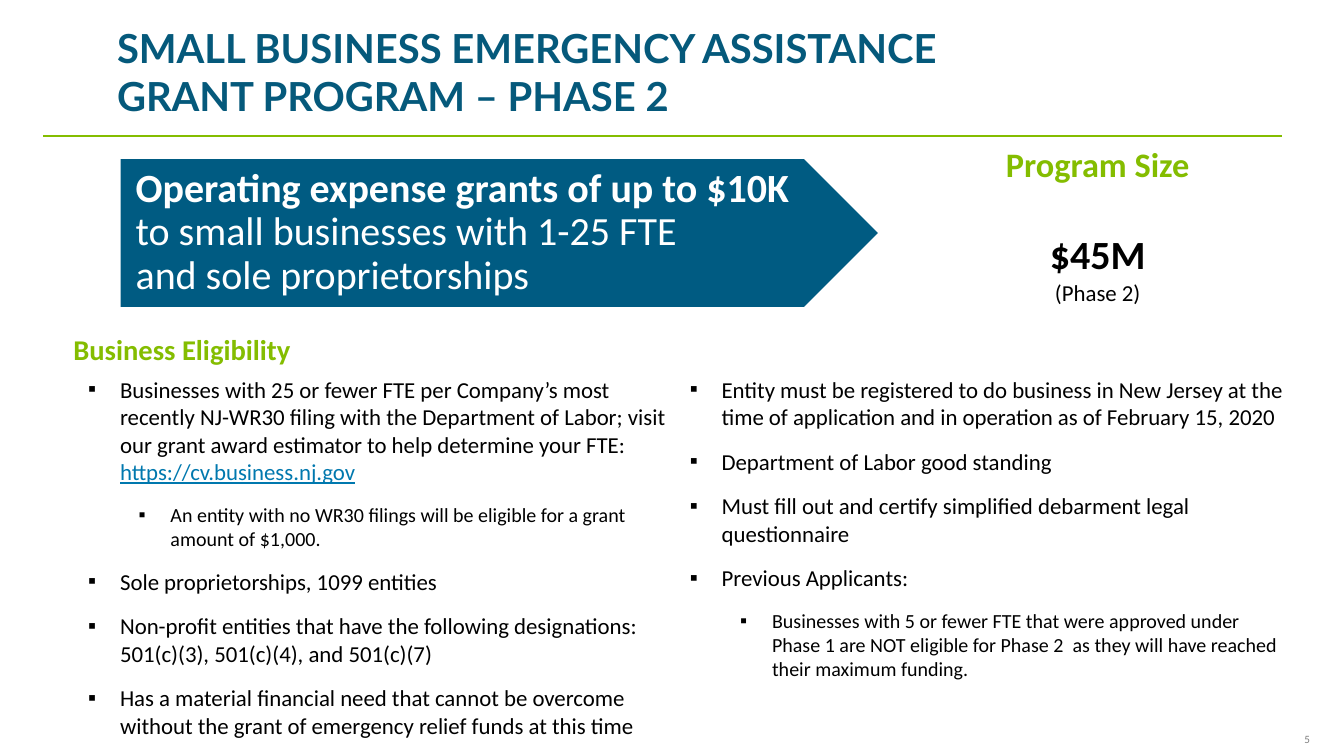
from lxml import etree
from pptx import Presentation
from pptx.dml.color import RGBColor
from pptx.enum import shapes, text
from pptx.oxml import ns
from pptx.util import Inches, Pt

NAVY = RGBColor(0x00, 0x5B, 0x82)
TITLE_BLUE = RGBColor(0x05, 0x59, 0x7B)
LINK_BLUE = RGBColor(0x00, 0x78, 0xAE)
GREEN = RGBColor(0x84, 0xBD, 0x00)
GRAY = RGBColor(0x80, 0x80, 0x80)
BLACK = RGBColor(0, 0, 0)
WHITE = RGBColor(0xFF, 0xFF, 0xFF)
CENTER = text.PP_ALIGN.CENTER

ESTIMATOR_LINK = "https://cv.business.nj.gov"
# Each entry is (level, text).
LEFT_RULES = [
    (0, "Businesses with 25 or fewer FTE per Company’s most recently NJ-WR30 "
        "filing with the Department of Labor; visit our grant award estimator "
        "to help determine your FTE: " + ESTIMATOR_LINK),
    (1, "An entity with no WR30 filings will be eligible for a grant amount of $1,000."),
    (0, "Sole proprietorships, 1099 entities"),
    (0, "Non-profit entities that have the following designations: "
        "501(c)(3), 501(c)(4), and 501(c)(7)"),
    (0, "Has a material financial need that cannot be overcome without the "
        "grant of emergency relief funds at this time"),
]
RIGHT_RULES = [
    (0, "Entity must be registered to do business in New Jersey at the time of "
        "application and in operation as of February 15, 2020"),
    (0, "Department of Labor good standing"),
    (0, "Must fill out and certify simplified debarment legal questionnaire"),
    (0, "Previous Applicants:"),
    (1, "Businesses with 5 or fewer FTE that were approved under Phase 1 are NOT "
        "eligible for Phase 2  as they will have reached their maximum funding."),
]


def add_span(para, words, size=16, color=BLACK, bold=False, underline=False, font="Calibri"):
    span = para.add_run()
    span.text = words
    span.font.name = font
    span.font.size = Pt(size)
    span.font.color.rgb = color
    span.font.bold = bold
    span.font.underline = underline


def add_text(page, left, top, width, height, words, align=None, spacing=None,
             wrap=True, margin=None, **style):
    box = page.shapes.add_textbox(Inches(left), Inches(top), Inches(width), Inches(height))
    frame = box.text_frame
    frame.word_wrap = wrap
    if margin is not None:
        frame.margin_left = frame.margin_right = Inches(margin)
        frame.margin_top = frame.margin_bottom = Inches(margin)
    para = frame.paragraphs[0]
    para.alignment = align
    para.line_spacing = spacing
    add_span(para, words, **style)


def add_bullet(para, level):
    para.level = level
    properties = para._p.get_or_add_pPr()
    properties.set("marL", str(Inches((0.31, 0.8)[level])))
    properties.set("indent", str(Inches(-0.31)))
    etree.SubElement(properties, ns.qn("a:buFont")).set("typeface", "Arial")
    etree.SubElement(properties, ns.qn("a:buChar")).set("char", "▪")
    para.space_after = Pt(12)


def add_rules(page, left, rules):
    box = page.shapes.add_textbox(Inches(left), Inches(3.6), Inches(6.04), Inches(3.85))
    frame = box.text_frame
    frame.word_wrap = True
    for index, (level, words) in enumerate(rules):
        para = frame.add_paragraph() if index else frame.paragraphs[0]
        add_bullet(para, level)
        lead, link, _ = words.partition(ESTIMATOR_LINK)
        add_span(para, lead, size=(16, 14)[level])
        if link:
            add_span(para, link, color=LINK_BLUE, underline=True)


def add_divider(page):
    line = page.shapes.add_connector(
        shapes.MSO_CONNECTOR.STRAIGHT, Inches(0.42), Inches(1.32), Inches(12.47), Inches(1.32))
    line.line.color.rgb = GREEN
    line.line.width = Pt(1.5)
    etree.SubElement(line._element.spPr, ns.qn("a:effectLst"))


def add_grant_banner(page):
    banner = page.shapes.add_shape(
        shapes.MSO_SHAPE.PENTAGON, Inches(1.16), Inches(1.53), Inches(7.4), Inches(1.47))
    banner.shadow.inherit = False
    banner.fill.solid()
    banner.fill.fore_color.rgb = NAVY
    banner.line.color.rgb = WHITE
    banner.line.width = Pt(2)
    frame = banner.text_frame
    frame.word_wrap = True
    frame.vertical_anchor = text.MSO_ANCHOR.MIDDLE
    frame.margin_left, frame.margin_right = Inches(0.16), Inches(0.04)
    frame.margin_top = frame.margin_bottom = Inches(0.08)
    para = frame.paragraphs[0]
    para.alignment = text.PP_ALIGN.LEFT
    para.line_spacing = 0.9
    add_span(para, "Operating expense grants of up to $10K", size=28, color=WHITE, bold=True)
    for words in ("to small businesses with 1-25 FTE", "and sole proprietorships"):
        para.add_line_break()
        add_span(para, words, size=28, color=WHITE)


def add_program_size(page):
    table = page.shapes.add_table(
        2, 1, Inches(8.71), Inches(1.36), Inches(3.93), Inches(2.01)).table
    table.first_row = table.horz_banding = False
    heading, amount = table.cell(0, 0), table.cell(1, 0)
    for row, cell, height in zip(table.rows, (heading, amount), (0.49, 1.52)):
        row.height = Inches(height)
        cell.fill.background()
        cell.vertical_anchor = text.MSO_ANCHOR.MIDDLE
    phase = amount.text_frame.add_paragraph()
    size = amount.text_frame.paragraphs[0]
    title = heading.text_frame.paragraphs[0]
    for para in (title, size, phase):
        para.alignment = CENTER
    add_span(title, "Program Size", size=24, color=GREEN, bold=True)
    add_span(size, "$45M", size=28, bold=True)
    add_span(phase, "(Phase 2)")


def main():
    deck = Presentation()
    deck.slide_width, deck.slide_height = Inches(13.07), Inches(7.35)
    page = deck.slides.add_slide(deck.slide_layouts[6])
    add_text(page, 12.61, 7.12, 0.13, 0.13, "5", align=text.PP_ALIGN.RIGHT,
             wrap=False, margin=0, size=7.8, color=GRAY)
    add_grant_banner(page)
    add_text(page, 1.04, 0.18, 9.06, 1.06,
             "SMALL BUSINESS EMERGENCY ASSISTANCE GRANT PROGRAM – PHASE 2",
             size=28, color=TITLE_BLUE, bold=True, font="Lato")
    add_rules(page, 0.76, LEFT_RULES)
    add_rules(page, 6.61, RIGHT_RULES)
    add_text(page, 0.43, 3.01, 2.68, 0.56, "Business Eligibility",
             align=CENTER, spacing=1.5, size=20, color=GREEN, bold=True)
    add_divider(page)
    add_program_size(page)
    deck.save("out.pptx")


if __name__ == "__main__":
    main()
